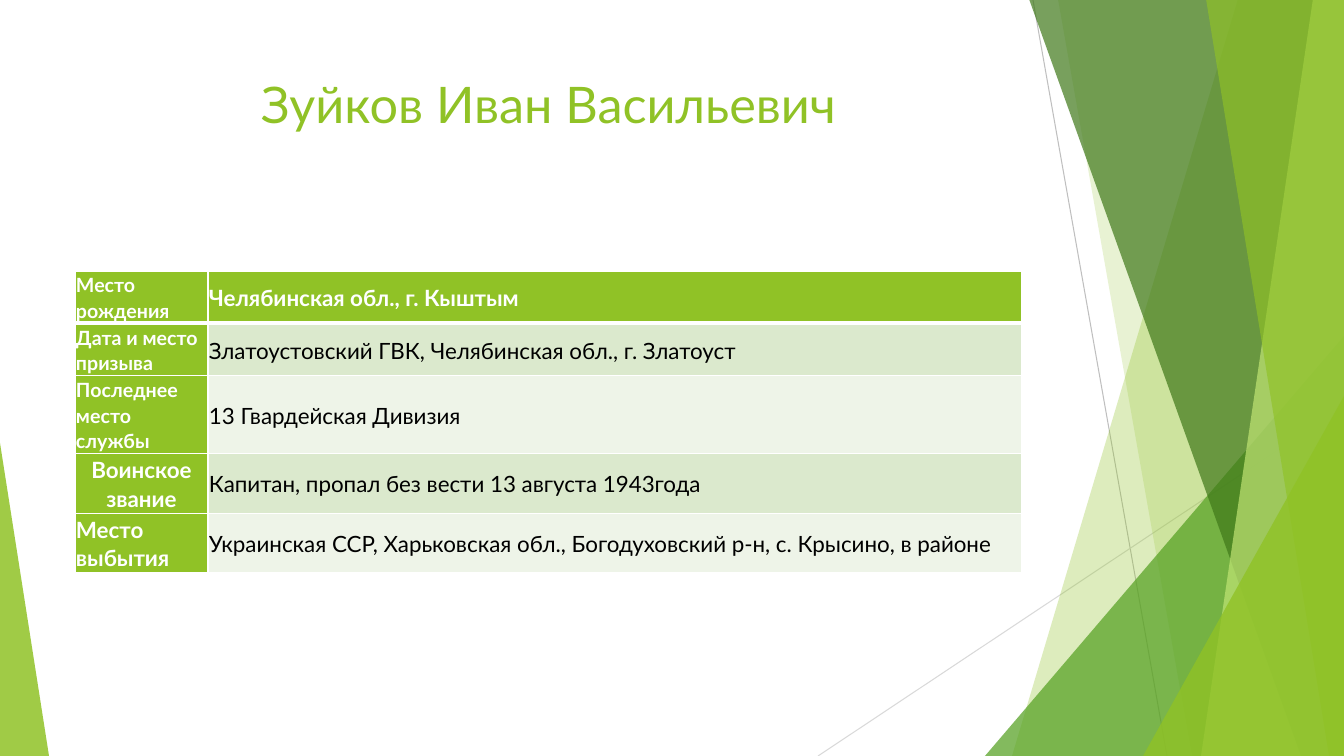
"""Build a service record slide with a title, a table and green facets."""
from lxml import etree
from pptx import Presentation
from pptx import util as u
from pptx.dml.color import RGBColor
from pptx.enum import shapes, text
from pptx.oxml import ns

PX = 914400 * 10 // 1008
WIDTH, HEIGHT = 1344, 756
GREEN = "90C226"
WHITE = "FFFFFF"
color = RGBColor.from_string


def write(frame, words, size=16, ink="000000", bold=False,
          align=text.PP_ALIGN.LEFT, spacing=None):
    paragraph = frame.paragraphs[0]
    paragraph.alignment = align
    paragraph.line_spacing = spacing
    run = paragraph.add_run()
    run.text = words
    run.font.name = "Lato"
    run.font.size = u.Pt(size)
    run.font.bold = bold
    run.font.color.rgb = color(ink)


presentation = Presentation()
presentation.slide_width = WIDTH * PX
presentation.slide_height = HEIGHT * PX
slide = presentation.slides.add_slide(presentation.slide_layouts[6])

rays = [((1033, 0, 1167, HEIGHT), "BFBFBF"), ((WIDTH, 406, 818, HEIGHT), "D9D9D9")]
for ends, ink in rays:
    ray = slide.shapes.add_connector(
        shapes.MSO_CONNECTOR.STRAIGHT, *[end * PX for end in ends])
    ray.line.color.rgb = color(ink)
    ray.line.width = u.Pt(0.75)
    etree.SubElement(ray.element.spPr, ns.qn("a:effectLst"))

# Bands: top and bottom x of the left edge; triangles: left, top, width, apex.
facets = [
    ("band", (1238, 1012), GREEN, 30),
    ("band", (1058, 1192), GREEN, 20),
    ("triangle", (985, 336, 359, 1), "54A021", 72),
    ("band", (1029, 1301), "3F7819", 70),
    ("band", (1313, 1201), "C0E474", 70),
    ("band", (1206, 1329), GREEN, 65),
    ("triangle", (1143, 396, 201, 1), GREEN, 80),
    ("triangle", (0, 443, 49, 0), GREEN, 85),
]
for kind, place, ink, opacity in facets:
    if kind == "band":
        top_x, bottom_x = place
        builder = slide.shapes.build_freeform(top_x, -1, scale=PX)
        builder.add_line_segments([(WIDTH, -1), (WIDTH, HEIGHT), (bottom_x, HEIGHT)])
        facet = builder.convert_to_shape()
    else:
        left, top, width, apex = place
        facet = slide.shapes.add_shape(
            shapes.MSO_SHAPE.ISOSCELES_TRIANGLE,
            left * PX, top * PX, width * PX, (HEIGHT - top) * PX)
        facet.adjustments[0] = apex
    facet.shadow.inherit = False
    facet.line.fill.background()
    facet.fill.solid()
    facet.fill.fore_color.rgb = color(ink)
    tint = facet.element.spPr.find(".//" + ns.qn("a:srgbClr"))
    etree.SubElement(tint, ns.qn("a:alpha"), val=str(opacity * 1000))

title = slide.shapes.add_textbox(75 * PX, 68 * PX, 947 * PX, 145 * PX)
title.text_frame.word_wrap = True
write(title.text_frame, "Зуйков Иван Васильевич", size=36, ink=GREEN,
      align=text.PP_ALIGN.CENTER)

records = [
    ("Место рождения", "Челябинская обл., г. Кыштым", 14, 52),
    ("Дата и место призыва", "Златоустовский ГВК, Челябинская обл., г. Златоуст", 14, 52),
    ("Последнее место службы", "13 Гвардейская Дивизия", 14, 78),
    ("Воинское звание", "Капитан, пропал без вести 13 августа 1943года", 16, 59),
    ("Место выбытия",
     "Украинская ССР, Харьковская обл., Богодуховский р-н, с. Крысино, в районе", 16, 59),
]
table = slide.shapes.add_table(
    len(records), 2, 75 * PX, 271 * PX, 947 * PX, 300 * PX).table
table.columns[0].width = 133 * PX
table.columns[1].width = 814 * PX
for row, (label, value, label_size, height) in enumerate(records):
    table.rows[row].height = height * PX
    for column, words in enumerate((label, value)):
        cell = table.cell(row, column)
        header = row == 0 or column == 0
        centered = label == "Воинское звание" and column == 0
        cell.vertical_anchor = text.MSO_ANCHOR.MIDDLE
        cell.margin_left = cell.margin_right = PX
        cell.margin_top = cell.margin_bottom = PX
        cell.fill.solid()
        cell.fill.fore_color.rgb = color(
            GREEN if header else "DBE9CD" if row % 2 else "EEF4E8")
        write(cell.text_frame, words, size=16 if column else label_size,
              ink=WHITE if header else "000000", bold=header, spacing=1.07,
              align=text.PP_ALIGN.CENTER if centered else text.PP_ALIGN.LEFT)
        properties = cell._tc.get_or_add_tcPr()
        for position, side in enumerate("LRTB"):
            thick = (row, side) in ((0, "B"), (1, "T"))
            border = etree.Element(ns.qn("a:ln" + side), w=str(u.Pt(3 if thick else 1)))
            paint = etree.SubElement(border, ns.qn("a:solidFill"))
            etree.SubElement(paint, ns.qn("a:srgbClr"), val=WHITE)
            properties.insert(position, border)

presentation.save("out.pptx")
